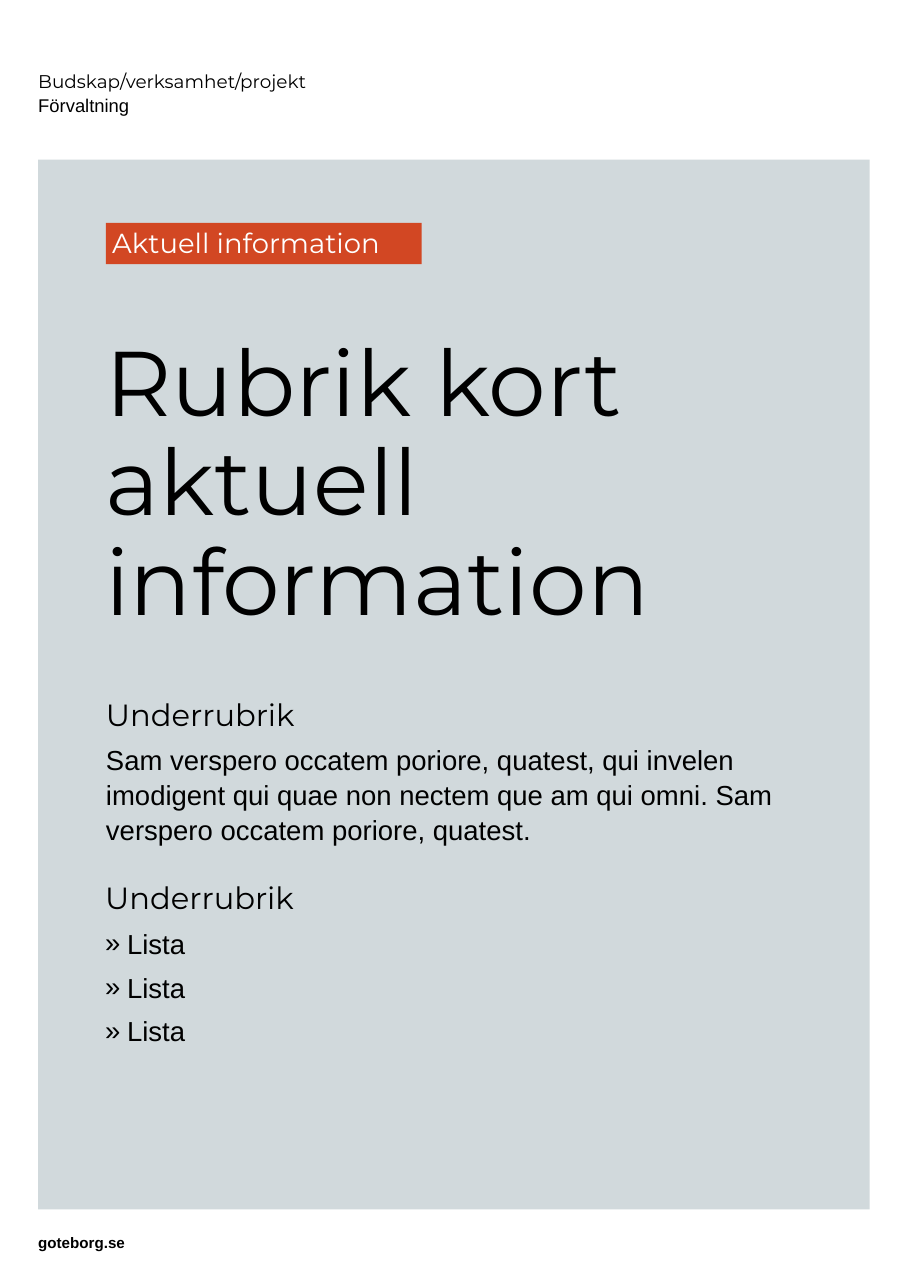
"""Build a portrait information poster with a heading, a text section and a list."""

from dataclasses import dataclass
from typing import Any

from lxml import etree
from pptx import Presentation
from pptx.dml.color import RGBColor
from pptx.enum.shapes import MSO_SHAPE
from pptx.enum.text import MSO_ANCHOR, MSO_AUTO_SIZE, PP_ALIGN
from pptx.oxml.ns import qn
from pptx.util import Inches, Length, Pt

RECTANGLE = MSO_SHAPE.RECTANGLE
TOP, MIDDLE = MSO_ANCHOR.TOP, MSO_ANCHOR.MIDDLE
LEFT = PP_ALIGN.LEFT
NO_AUTOFIT = MSO_AUTO_SIZE.NONE
COMPARISON_LAYOUT = 4


@dataclass(frozen=True)
class Theme:
    """Colours, fonts and type sizes of the poster."""

    ink: str = "000000"
    paper: str = "FFFFFF"
    panel: str = "D1D9DC"
    accent: str = "D24723"
    heading_font: str = "Montserrat"
    text_font: str = "Arial"
    title_size: float = 84.8
    subheading_size: float = 28.3
    text_size: float = 25.4
    sender_size: float = 17
    address_size: float = 14


THEME = Theme()


@dataclass(frozen=True)
class Style:
    """Character and paragraph format of one kind of text."""

    font: str
    size: float
    color: str = THEME.ink
    bold: bool = False
    line_spacing: float | Length = 1.0
    space_before: float = 0
    bullet: str = ""


@dataclass(frozen=True)
class Line:
    """One paragraph of text with its style."""

    text: str
    style: Style


@dataclass(frozen=True)
class Block:
    """Place, margins and paragraphs of one text area."""

    box: tuple[float, float, float, float]
    lines: tuple[Line, ...]
    anchor: MSO_ANCHOR = TOP
    margins: tuple[float, float, float, float] = (0, 0, 0, 0)


TITLE = Style(THEME.heading_font, THEME.title_size, line_spacing=0.9)
LABEL = Style(THEME.heading_font, THEME.text_size, THEME.paper, line_spacing=0.9)
SUBHEADING = Style(THEME.heading_font, THEME.subheading_size)
LIST_HEADING = Style(THEME.heading_font, THEME.subheading_size, line_spacing=0.9)
BODY = Style(THEME.text_font, THEME.text_size, line_spacing=1.05, space_before=8.5)
LIST_ITEM = Style(THEME.text_font, THEME.text_size, line_spacing=1.05,
                  space_before=8.5, bullet="»")
PROJECT = Style(THEME.heading_font, THEME.sender_size, line_spacing=Pt(22))
DEPARTMENT = Style(THEME.text_font, THEME.sender_size, line_spacing=Pt(22))
ADDRESS = Style(THEME.text_font, THEME.address_size, bold=True)

PANEL_BOX = (0.49, 2.05, 10.67, 13.47)
TITLE_BLOCK = Block((1.35, 3.8, 8.94, 4.88),
                    (Line("Rubrik kort aktuell information", TITLE),), MIDDLE)
LABEL_BLOCK = Block((1.36, 2.86, 4.05, 0.53), (Line("Aktuell information", LABEL),),
                    MIDDLE, (0.08, 0.1, 0.08, 0.08))
SECTION_BLOCK = Block((1.36, 8.93, 8.94, 2.84), (
    Line("Underrubrik", SUBHEADING),
    Line("Sam verspero occatem poriore, quatest, qui invelen imodigent qui quae "
         "non nectem que am qui omni. Sam verspero occatem poriore, quatest.", BODY),
))
LIST_BLOCK = Block((1.35, 11.33, 8.94, 3.52), (
    Line("Underrubrik", LIST_HEADING), *[Line("Lista", LIST_ITEM)] * 3,
))
TEXT_BOXES = (
    Block((0.49, 0.94, 7.8, 0.48),
          (Line("Budskap/verksamhet/projekt", PROJECT), Line("Förvaltning", DEPARTMENT)),
          MIDDLE),
    Block((0.49, 15.83, 7.33, 0.24), (Line("goteborg.se", ADDRESS),), MIDDLE),
)


def set_attributes(target: Any, values: dict[str, Any]) -> None:
    """Set every named attribute on the target."""
    for name, value in values.items():
        setattr(target, name, value)


def set_bullet(paragraph: Any, bullet: str) -> None:
    """Give the paragraph a hanging bullet, or switch its bullet off."""
    properties = paragraph._p.get_or_add_pPr()
    indent = Inches(0.28) if bullet else 0
    properties.set("marL", str(indent))
    properties.set("indent", str(-indent))
    if bullet:
        etree.SubElement(properties, qn("a:buFont"), typeface=THEME.text_font)
        etree.SubElement(properties, qn("a:buChar"), char=bullet)
    else:
        etree.SubElement(properties, qn("a:buNone"))


def write_line(paragraph: Any, line: Line) -> None:
    """Write one styled line into the paragraph."""
    style = line.style
    set_bullet(paragraph, style.bullet)
    set_attributes(paragraph, {
        "alignment": LEFT,
        "line_spacing": style.line_spacing,
        "space_before": Pt(style.space_before),
        "space_after": Pt(0),
    })
    run = paragraph.add_run()
    run.text = line.text
    set_attributes(run.font, {"name": style.font, "size": Pt(style.size), "bold": style.bold})
    run.font.color.rgb = RGBColor.from_string(style.color)


def fill_block(shape: Any, block: Block) -> None:
    """Place the shape and write the block's text into it."""
    sides = ("left", "top", "width", "height")
    set_attributes(shape, dict(zip(sides, map(Inches, block.box))))
    frame = shape.text_frame
    margins = ("margin_left", "margin_top", "margin_right", "margin_bottom")
    set_attributes(frame, {
        "word_wrap": True,
        "auto_size": NO_AUTOFIT,
        "vertical_anchor": block.anchor,
        **dict(zip(margins, map(Inches, block.margins))),
    })
    for index, line in enumerate(block.lines):
        write_line(frame.add_paragraph() if index else frame.paragraphs[0], line)


def set_fill(shape: Any, color: str) -> None:
    """Fill the shape with one colour and hide its outline."""
    shape.fill.solid()
    shape.fill.fore_color.rgb = RGBColor.from_string(color)
    shape.line.fill.background()


def add_panel(slide: Any) -> None:
    """Add the grey panel behind all text."""
    panel = slide.shapes.add_shape(RECTANGLE, *map(Inches, PANEL_BOX))
    panel.shadow.inherit = False
    set_fill(panel, THEME.panel)
    slide.shapes._spTree.insert(2, panel._element)


def main() -> None:
    """Build and save the poster."""
    presentation = Presentation()
    set_attributes(presentation, {"slide_width": Inches(11.69), "slide_height": Inches(16.53)})
    slide = presentation.slides.add_slide(presentation.slide_layouts[COMPARISON_LAYOUT])
    add_panel(slide)
    title, label, section, item_list, spare = slide.placeholders
    spare._element.getparent().remove(spare._element)
    set_fill(label, THEME.accent)
    blocks = (TITLE_BLOCK, LABEL_BLOCK, SECTION_BLOCK, LIST_BLOCK)
    for placeholder, block in zip((title, label, section, item_list), blocks):
        fill_block(placeholder, block)
    for block in TEXT_BOXES:
        fill_block(slide.shapes.add_textbox(*map(Inches, block.box)), block)
    presentation.save("out.pptx")


if __name__ == "__main__":
    main()
